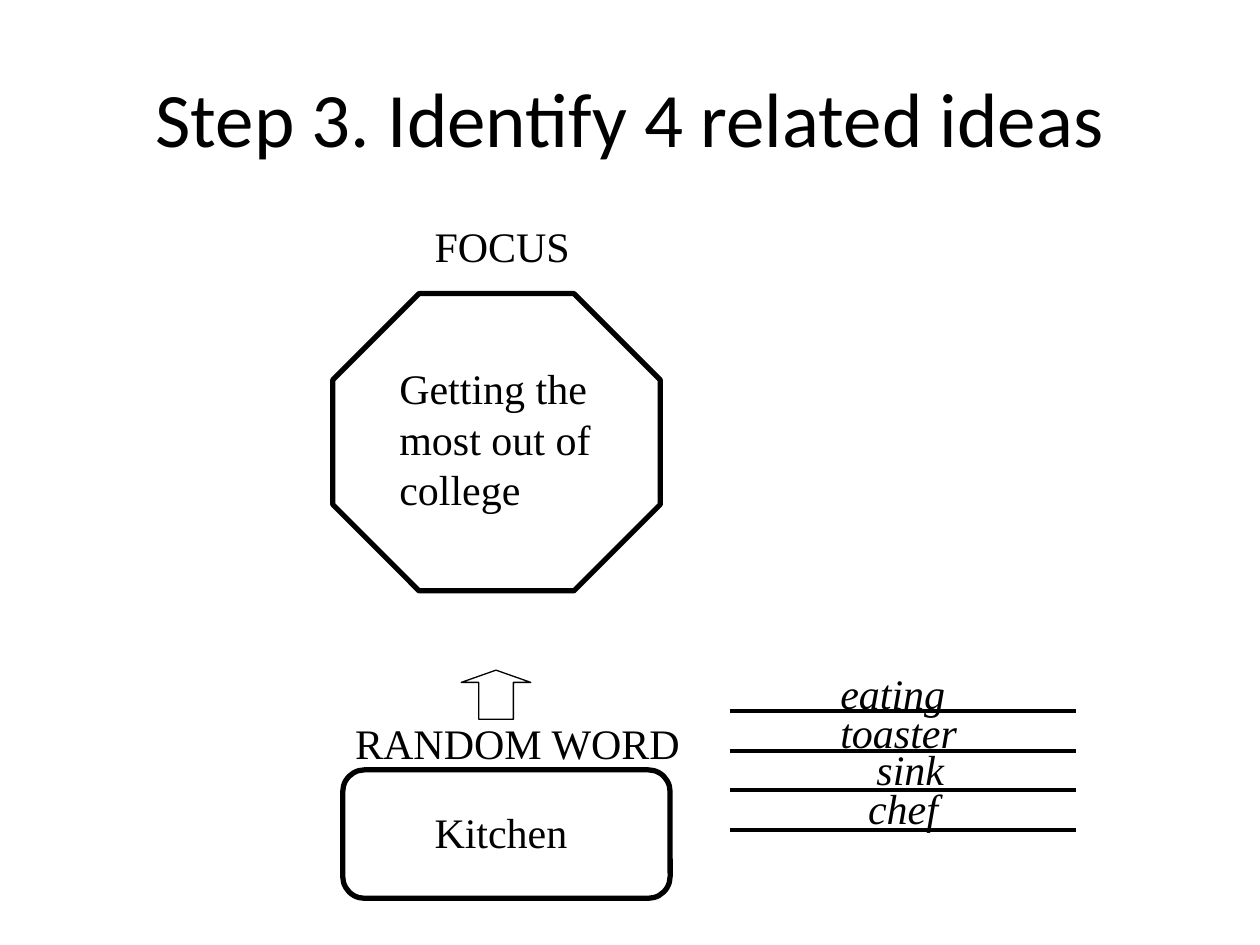
from lxml.etree import SubElement
from pptx import Presentation
from pptx.dml.color import RGBColor
from pptx.enum.shapes import MSO_CONNECTOR, MSO_SHAPE
from pptx.enum.text import MSO_ANCHOR, MSO_AUTO_SIZE, PP_ALIGN
from pptx.oxml.ns import qn
from pptx.util import Cm, Pt

BLACK = "000000"
LABEL_FONT = {"name": "Times New Roman", "size": Pt(24)}
IDEA_FONT = {**LABEL_FONT, "italic": True}
TITLE_FONT = {"name": "Calibri", "size": Pt(44)}

OUTLINES = [  # preset, box in cm, adjustments, line width in points
    (MSO_SHAPE.OCTAGON, (6.71, 5.92, 6.6, 5.99), [0.29], 3),
    (MSO_SHAPE.ROUNDED_RECTANGLE, (6.91, 15.52, 6.6, 2.59), [0.17], 3),
    (MSO_SHAPE.UP_ARROW, (9.3, 13.51, 1.4, 0.99), [0.5, 0.25], 0.75),
]
LABELS = [
    ("FOCUS", (8.51, 4.32, 3.25, 1.27)),
    ("Getting the\nmost out of\ncollege", (7.8, 7.19, 4.5, 3.33)),
    ("RANDOM WORD", (6.91, 14.33, 7.09, 1.27)),
    ("Kitchen", (8.51, 16.13, 3.2, 1.27)),
]
IDEAS = [
    ("eating", (16.69, 13.34, 2.62, 1.27)),
    ("toaster", (16.69, 14.12, 2.87, 1.27)),
    ("sink", (17.42, 14.86, 1.88, 1.27)),
    ("chef", (17.25, 15.65, 1.93, 1.27)),
]
RULE_LEFT, RULE_RIGHT, RULE_TOP, RULE_STEP = 14.71, 21.69, 14.33, 0.8


def color(hex_value):
    return RGBColor.from_string(hex_value)


def lengths(values):
    return [Cm(value) for value in values]


def set_attributes(target, values):
    for name, value in values.items():
        setattr(target, name, value)


def write_text(frame, text, font):
    frame.text = text
    for paragraph in frame.paragraphs:
        set_attributes(paragraph.runs[0].font, font)
        paragraph.runs[0].font.color.rgb = color(BLACK)


def set_line(shape, width):
    shape.line.color.rgb = color(BLACK)
    shape.line.width = Pt(width)


def fill_title(slide, text):
    title = slide.shapes.title
    box = dict(zip(("left", "top", "width", "height"),
                   lengths((1.27, 0.76, 22.86, 3.18))))
    set_attributes(title, box)
    write_text(title.text_frame, text, TITLE_FONT)
    title.text_frame.vertical_anchor = MSO_ANCHOR.MIDDLE
    title.text_frame.paragraphs[0].alignment = PP_ALIGN.CENTER


def add_outline(slide, preset, box, adjustments, width):
    shape = slide.shapes.add_shape(preset, *lengths(box))
    for index, value in enumerate(adjustments):
        shape.adjustments[index] = value
    shape.shadow.inherit = False
    shape.fill.background()
    set_line(shape, width)


def add_label(slide, text, box, font):
    frame = slide.shapes.add_textbox(*lengths(box)).text_frame
    set_attributes(frame, {"word_wrap": False,
                           "auto_size": MSO_AUTO_SIZE.SHAPE_TO_FIT_TEXT})
    write_text(frame, text, font)


def add_rule(slide, top):
    ends = lengths((RULE_LEFT, top, RULE_RIGHT, top))
    rule = slide.shapes.add_connector(MSO_CONNECTOR.STRAIGHT, *ends)
    set_line(rule, 2.25)
    SubElement(rule._element.spPr, qn("a:effectLst"))


def main():
    presentation = Presentation()
    set_attributes(presentation, {"slide_width": Cm(25.4),
                                  "slide_height": Cm(19.05)})
    title_only = presentation.slide_layouts[5]
    slide = presentation.slides.add_slide(title_only)
    fill_title(slide, "Step 3. Identify 4 related ideas")
    for outline in OUTLINES:
        add_outline(slide, *outline)
    for text, box in LABELS:
        add_label(slide, text, box, LABEL_FONT)
    for index, (text, box) in enumerate(IDEAS):
        add_label(slide, text, box, IDEA_FONT)
        add_rule(slide, RULE_TOP + index * RULE_STEP)
    presentation.save("out.pptx")


if __name__ == "__main__":
    main()
